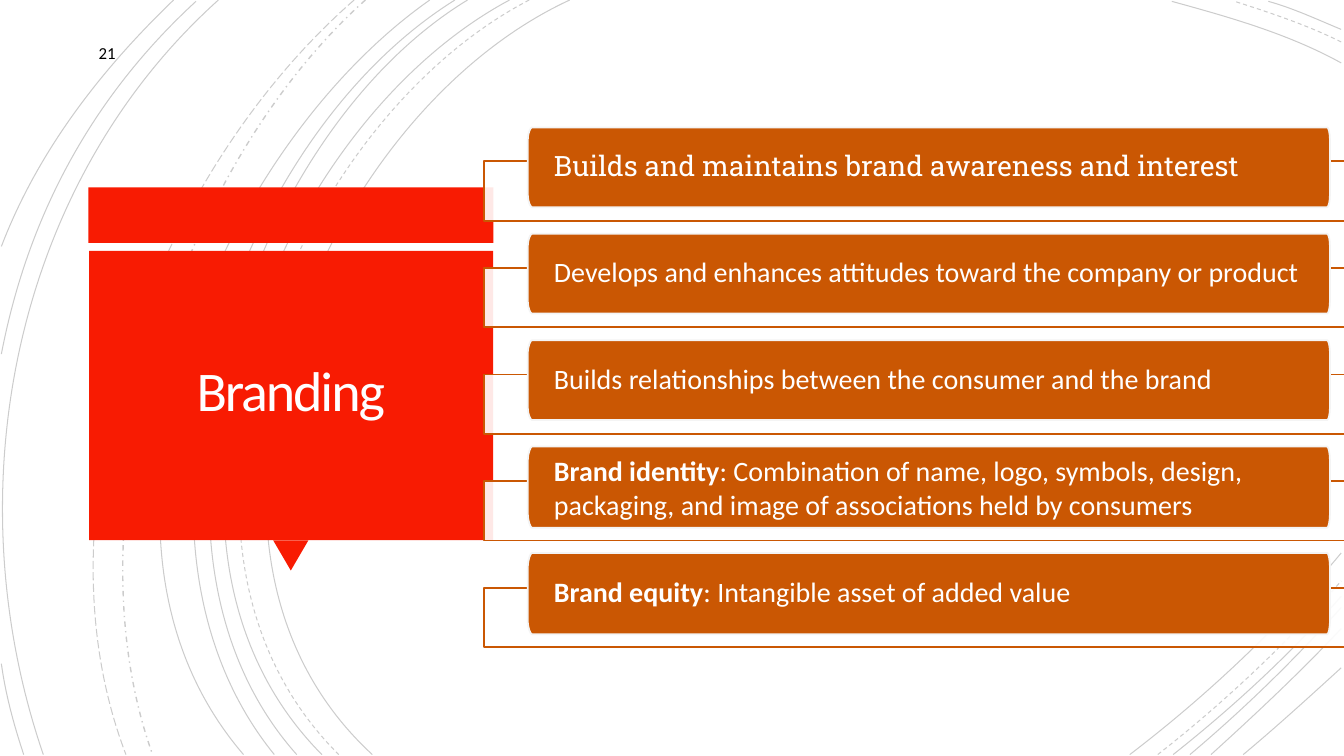
from typing import NamedTuple

from lxml.etree import SubElement
from pptx import Presentation
from pptx.dml.color import RGBColor
from pptx.dml.fill import FillFormat
from pptx.enum.dml import MSO_LINE
from pptx.enum.shapes import MSO_SHAPE
from pptx.enum.text import MSO_ANCHOR, MSO_AUTO_SIZE, PP_ALIGN
from pptx.oxml.ns import qn
from pptx.shapes.autoshape import Shape
from pptx.text.text import TextFrame, _Paragraph
from pptx.util import Pt

RED, ORANGE, WHITE, BLACK = "F81B02", "CA5703", "FFFFFF", "000000"
SOLID, DASH, LONG, DOT = (MSO_LINE.SOLID, MSO_LINE.DASH,
                          MSO_LINE.LONG_DASH, MSO_LINE.DASH_DOT)
Point = tuple[float, float]


class Box(NamedTuple):
    left: float
    top: float
    width: float
    height: float


class Arc(NamedTuple):
    """A cubic curve: start, two control points, end."""
    start: Point
    lead: Point
    trail: Point
    end: Point
    dash: MSO_LINE = SOLID
    weight: float = 0.75


class Bar(NamedTuple):
    term: str
    text: str
    font: str = "Calibri"
    spacing: float = 0.9


ARCS = [
    Arc((406.8, 0), (226.8, 82.8), (103, 388.8), (265.7, 538.6)),
    Arc((958.3, 44.6), (920.2, 24.5), (877, 11.5), (836.6, 0.7)),
    Arc((807.1, 538.6), (861.8, 496.8), (913.7, 447.8), (958.3, 394.6)),
    Arc((378, 0), (205.2, 90), (88.6, 386.6), (241.9, 538.6), DASH),
    Arc((958.3, 29.5), (933.8, 18), (907.2, 8.6), (882, 0.7), DASH),
    Arc((826.6, 539.3), (873.4, 502.6), (918, 460.8), (957.6, 415.4), DASH),
    Arc((364.3, 0), (194.4, 91.4), (79.2, 386.6), (229.7, 538.6)),
    Arc((958.3, 20.9), (941, 13.7), (923.8, 6.5), (905.8, 0.7)),
    Arc((838.1, 538.6), (880.6, 504.7), (921.6, 466.6), (958.3, 425.5)),
    Arc((334.1, 0), (175.7, 95.8), (79.2, 389.5), (211.7, 538.6)),
    Arc((850.3, 538.6), (888.5, 506.9), (924.5, 471.6), (958.3, 434.2)),
    Arc((324.7, 0), (166.3, 99.4), (69.8, 383.8), (195.8, 538.6)),
    Arc((864.7, 538.6), (897.1, 510.5), (928.8, 480.2), (958.3, 448.6)),
    Arc((307.4, 0), (156.2, 105.8), (38.2, 380.9), (173.5, 538.6)),
    Arc((888.5, 538.6), (912.2, 519.1), (935.3, 498.2), (958.3, 476.6)),
    Arc((261.4, 0), (126.7, 119.5), (46.8, 366.5), (108.7, 538.6), DOT, 1),
    Arc((252.7, 0), (113, 121.7), (20.9, 359.3), (90, 538.6), LONG),
    Arc((156.2, 0), (7.9, 133.2), (-33.1, 352.8), (31, 538.6)),
    Arc((140.4, 0.7), (66.2, 69.1), (20.2, 154.1), (1.4, 252.7)),
    Arc((0.7, 473.8), (4.3, 496.1), (10.1, 517.7), (17.3, 538.6)),
    Arc((123.8, 0), (72, 49.7), (26.6, 108), (1.4, 175.7)),
]
BARS = [
    Bar("", "Builds and maintains brand awareness and interest", "Roboto Slab"),
    Bar("", "Develops and enhances attitudes toward the company or product"),
    Bar("", "Builds relationships between the consumer and the brand"),
    Bar("Brand identity", ": Combination of name, logo, symbols, design, "
        "packaging, and image of associations held by consumers", spacing=1),
    Bar("Brand equity", ": Intangible asset of added value"),
]
PITCH = 76.15


def paint(fill: FillFormat, color: str, alpha: int = 100) -> None:
    """Fill solidly; alpha is the opacity in percent."""
    fill.solid()
    fill.fore_color.rgb = RGBColor.from_string(color)
    if alpha < 100:
        tag = fill._xPr.find(qn("a:solidFill"))[0]
        SubElement(tag, qn("a:alpha")).set("val", str(alpha * 1000))


def trace(points: list[Point], closed: bool) -> Shape:
    """Draw a curve through each four points, and lines between the curves."""
    pen = shapes.build_freeform(*points[0], scale=Pt(1))
    pen.add_line_segments(points[1:], close=closed)
    shape = pen.convert_to_shape()
    shape.shadow.inherit = False
    lines = list(shape._element.iter(qn("a:lnTo")))
    for first in range(0, len(lines), 4):
        curve, *rest = lines[first:first + 3]
        curve.tag = qn("a:cubicBezTo")
        for line in rest:
            curve.append(line[0])
            line.getparent().remove(line)
    return shape


def place(kind: MSO_SHAPE, box: Box, color: str, alpha: int = 100) -> Shape:
    shape = shapes.add_shape(kind, *map(Pt, box))
    shape.shadow.inherit = False
    paint(shape.fill, color, alpha)
    shape.line.fill.background()
    return shape


def edge(shape: Shape, color: str, weight: float, alpha: int = 100) -> None:
    shape.line.width = Pt(weight)
    paint(shape.line.fill, color, alpha)


def pad(frame: TextFrame, side: float, end: float) -> None:
    """Wrap, centre vertically and set the insets."""
    frame.word_wrap = True
    frame.auto_size = MSO_AUTO_SIZE.NONE
    frame.vertical_anchor = MSO_ANCHOR.MIDDLE
    frame.margin_left = frame.margin_right = Pt(side)
    frame.margin_top = frame.margin_bottom = Pt(end)


def style(para: _Paragraph, font: str, size: float, color: str,
          align: PP_ALIGN = PP_ALIGN.LEFT, spacing: float = 1) -> None:
    para.font.name, para.font.size = font, Pt(size)
    para.font.color.rgb = RGBColor.from_string(color)
    para.alignment, para.line_spacing = align, spacing


def draw_arc(arc: Arc) -> None:
    shape = trace([arc.start, arc.lead, arc.trail, arc.end], False)
    shape.fill.background()
    edge(shape, BLACK, arc.weight, 20)
    shape.line.dash_style = arc.dash


def draw_pill(box: Box, across: float = 2.9, down: float = 9.5) -> Shape:
    """Draw a box whose corners are quarter ellipses."""
    left, top, width, height = box
    right, low = left + width, top + height
    corners = [(left, top, across, down), (right, top, -across, down),
               (right, low, -across, -down), (left, low, across, -down)]
    points = []
    for index, (x, y, dx, dy) in enumerate(corners):
        bend = [(x, y + dy), (x, y + 0.45 * dy), (x + 0.45 * dx, y), (x + dx, y)]
        points += bend[::-1] if index % 2 else bend
    shape = trace(points, True)
    paint(shape.fill, ORANGE)
    edge(shape, "F4F4F4", 1.25)
    return shape


def draw_bar(bar: Bar, shift: float) -> None:
    rail = place(MSO_SHAPE.RECTANGLE, Box(345.6, 115.2 + shift, 640.8, 42.5), WHITE, 90)
    edge(rail, ORANGE, 1.25)
    frame = draw_pill(Box(377.3, 90.8 + shift, 573.1, 57.4)).text_frame
    pad(frame, 18.7, 0.7)
    para = frame.paragraphs[0]
    style(para, bar.font, 20, WHITE, spacing=bar.spacing)
    if bar.term:
        run = para.add_run()
        run.text, run.font.bold = bar.term, True
    para.add_run().text = bar.text


deck = Presentation()
deck.slide_width, deck.slide_height = Pt(960), Pt(540)
slide = deck.slides.add_slide(deck.slide_layouts[5])
shapes = slide.shapes

for arc in ARCS:
    draw_arc(arc)

place(MSO_SHAPE.RECTANGLE, Box(63.1, 133.9, 289.4, 39.6), RED)
place(MSO_SHAPE.ISOSCELES_TRIANGLE, Box(195.1, 385.9, 25.2, 21.6), RED).rotation = 180
place(MSO_SHAPE.RECTANGLE, Box(63.6, 179.3, 288.7, 206.6), RED)

title = shapes.title
shapes._spTree.append(title._element)
title.left, title.top, title.width, title.height = map(Pt, (69.8, 185, 275.8, 193.7))
title.text_frame.text = "Branding"
pad(title.text_frame, 18, 18)
head = title.text_frame.paragraphs[0]
style(head, "Calibri", 40, "FFFEFF", PP_ALIGN.CENTER, 0.85)
head.runs[0]._r.get_or_add_rPr().set("spc", "-150")

number = shapes.add_textbox(*map(Pt, (63.4, 25.2, 288, 25.2))).text_frame
number.text = "21"
pad(number, 7.2, 3.6)
style(number.paragraphs[0], "Calibri", 12, BLACK)

for index, bar in enumerate(BARS):
    draw_bar(bar, index * PITCH)

deck.save("out.pptx")
